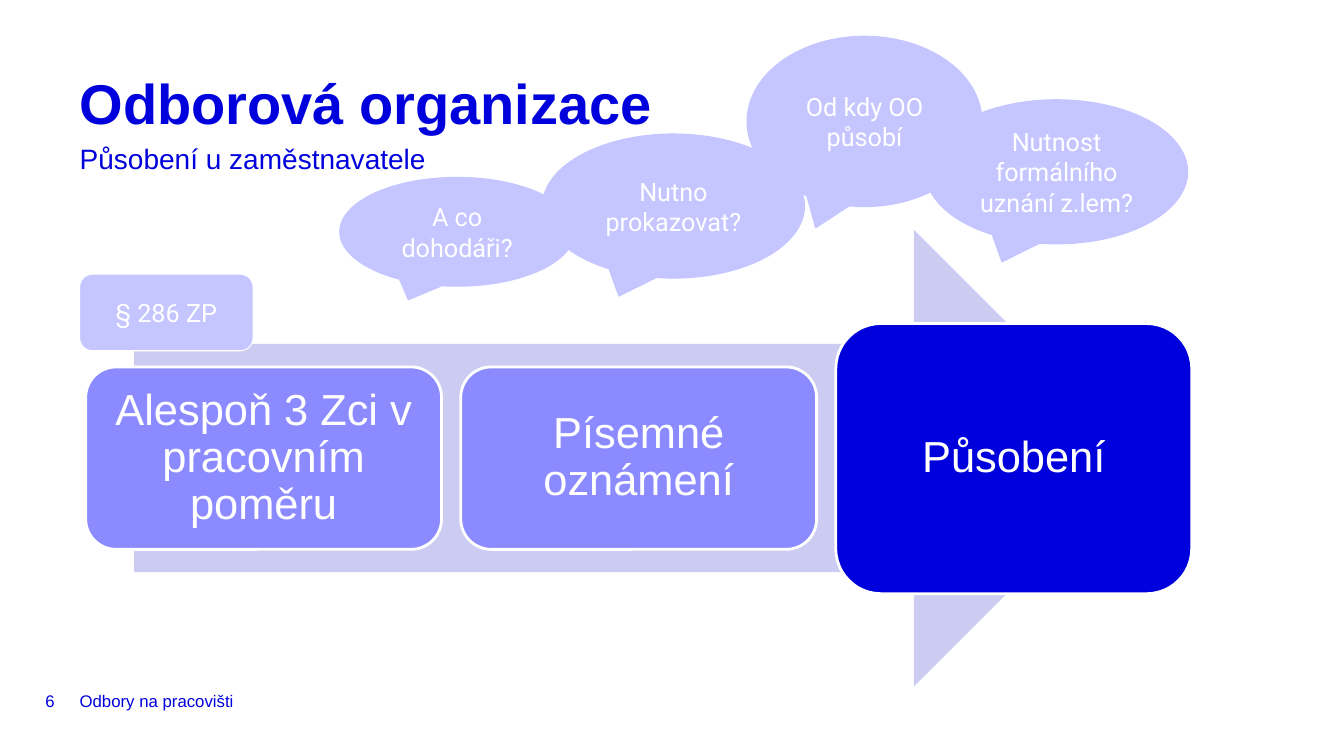
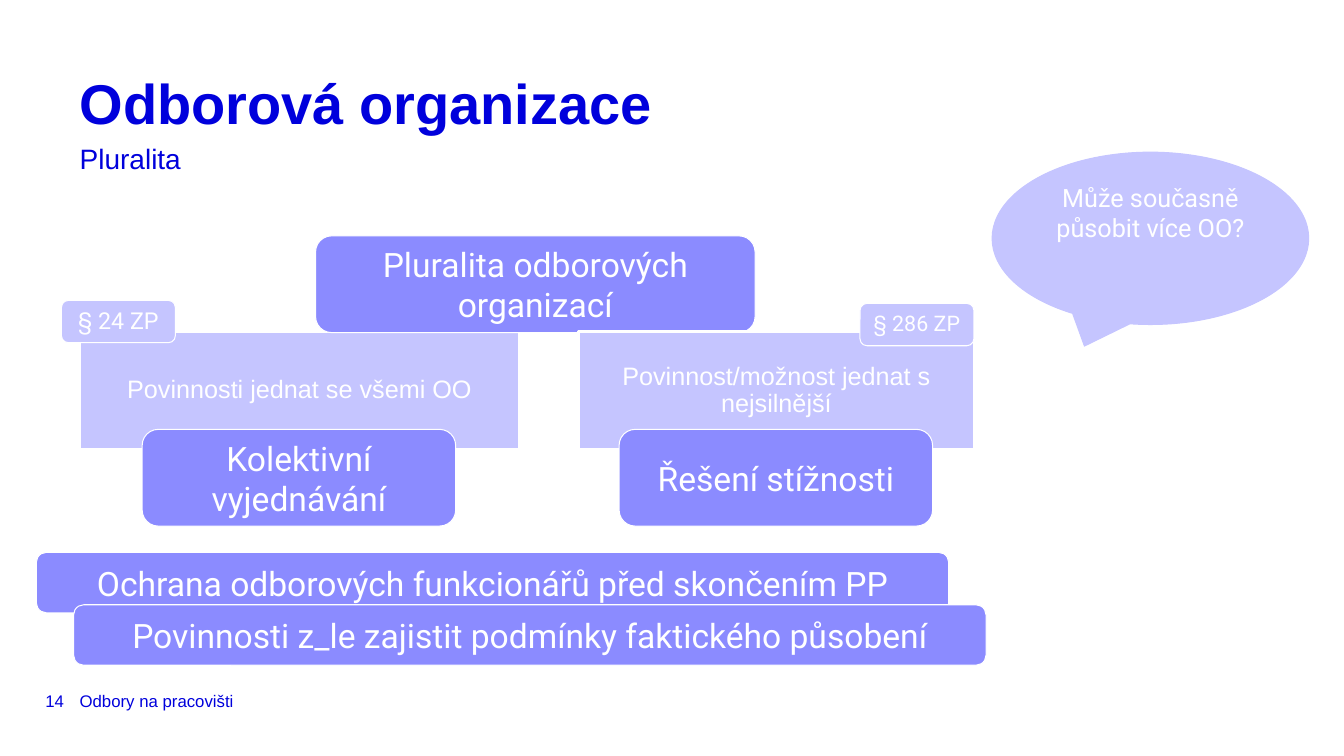
from pptx import Presentation
from pptx.dml.color import RGBColor
from pptx.enum.shapes import MSO_SHAPE
from pptx.enum.text import MSO_ANCHOR, PP_ALIGN
from pptx.util import Pt

PX = 9144  # 100 px to the inch

BLUE = RGBColor(0x00, 0x00, 0xDC)
VIOLET = RGBColor(0x8B, 0x8B, 0xFF)
LILAC = RGBColor(0xC5, 0xC5, 0xFF)
PALE = RGBColor(0xCC, 0xCC, 0xF2)
WHITE = RGBColor(0xFF, 0xFF, 0xFF)

ARROW = MSO_SHAPE.RIGHT_ARROW
RECT = MSO_SHAPE.RECTANGLE
ROUND = MSO_SHAPE.ROUNDED_RECTANGLE
CALLOUT = MSO_SHAPE.OVAL_CALLOUT
TOP, MIDDLE = MSO_ANCHOR.TOP, MSO_ANCHOR.MIDDLE
LEFT, CENTER = PP_ALIGN.LEFT, PP_ALIGN.CENTER


def write(sp, text, size=18, font="Roboto", color=WHITE, bold=False, align=CENTER,
          anchor=MIDDLE, inset=(10, 5), spacing=1.0, wrap=True):
    tf = sp.text_frame
    tf.word_wrap = wrap
    tf.vertical_anchor = anchor
    tf.margin_left = tf.margin_right = inset[0] * PX
    tf.margin_top = tf.margin_bottom = inset[1] * PX
    p = tf.paragraphs[0]
    p.alignment = align
    p.line_spacing = spacing
    r = p.add_run()
    r.text = text
    r.font.size = Pt(size)
    r.font.name = font
    r.font.bold = bold
    r.font.color.rgb = color


def block(s, preset, box, fill, line=WHITE, width=0.75):
    """Add a filled preset shape; box is left, top, width, height in px."""
    sp = s.shapes.add_shape(preset, *[v * PX for v in box])
    sp.shadow.inherit = False
    sp.fill.solid()
    sp.fill.fore_color.rgb = fill
    if line is None:
        sp.line.fill.background()
    else:
        sp.line.color.rgb = line
        sp.line.width = Pt(width)
    return sp


prs = Presentation()
prs.slide_width, prs.slide_height = 1333 * PX, 750 * PX

# Shared frame: footer, slide number, subtitle and title
slides = []
for number, subtitle in [("6", "Působení u zaměstnavatele"), ("14", "Pluralita")]:
    s = prs.slides.add_slide(prs.slide_layouts[6])
    slides.append(s)
    for text, box, style in [
        ("Odbory na pracovišti", (79, 681, 866, 28), dict(size=12)),
        (number, (45, 681, 28, 28), dict(size=12, wrap=False)),
        (subtitle, (79, 142, 1176, 30), dict(size=20, anchor=TOP, spacing=Pt(23))),
        ("Odborová organizace", (79, 79, 1176, 49),
         dict(size=40, bold=True, anchor=TOP, spacing=Pt(40))),
    ]:
        sp = s.shapes.add_textbox(*[v * PX for v in box])
        write(sp, text, font="Arial", color=BLUE, align=LEFT, inset=(0, 0), **style)

presence, plurality = slides

# Slide 6: steps along the arrow
block(presence, ARROW, (133, 228, 1000, 453), PALE, line=None)
STEP_LEFT, STEP_PITCH, STEP_WIDTH = 85, 372, 353
for i, (text, top, height, fill) in enumerate([
    ("Alespoň 3 Zci v pracovním poměru", 364, 181, VIOLET),
    ("Písemné oznámení", 364, 181, VIOLET),
    ("Působení", 321, 268, BLUE),
]):
    box = (STEP_LEFT + i * STEP_PITCH, top, STEP_WIDTH, height)
    sp = block(presence, ROUND, box, fill, width=2)
    write(sp, text, size=31, font="Arial", inset=(13, 13), spacing=0.9)

write(block(presence, ROUND, (79, 272, 172, 76), LILAC), "§ 286 ZP")

# Questions in callouts on both slides
for s, text, box, anchor in [
    (presence, "Od kdy OO působí", (741, 36, 233, 169), MIDDLE),
    (presence, "Nutnost formálního uznání z.lem?", (918, 99, 260, 143), MIDDLE),
    (presence, "Nutno prokazovat?", (538, 133, 260, 143), MIDDLE),
    (presence, "A co dohodáři?", (337, 176, 233, 108), MIDDLE),
    (plurality, "Může současně působit více OO?", (984, 151, 314, 171), TOP),
]:
    write(block(s, CALLOUT, box, LILAC, line=LILAC), text, anchor=anchor)

# Slide 14: duties, topics and law references, from back to front
duty = dict(font="Arial", inset=(7, 7), spacing=0.9)
topic = dict(size=24)
for preset, text, box, fill, width, style in [
    (RECT, "Povinnosti jednat se všemi OO", (79, 329, 436, 117), LILAC, 2, duty),
    (ROUND, "Pluralita odborových organizací", (313, 234, 436, 96), VIOLET, 0.75, topic),
    (RECT, "Povinnost/možnost jednat s nejsilnější", (574, 329, 392, 117), LILAC, 2, duty),
    (ROUND, "Kolektivní vyjednávání", (141, 426, 311, 96), VIOLET, 0.75, topic),
    (ROUND, "Řešení stížnosti", (614, 426, 311, 96), VIOLET, 0.75, topic),
    (ROUND, "Ochrana odborových funkcionářů před skončením PP",
     (36, 548, 905, 60), VIOLET, 0.75, topic),
    (ROUND, "Povinnosti z_le zajistit podmínky faktického působení",
     (73, 600, 905, 60), VIOLET, 0.75, topic),
    (ROUND, "§ 286 ZP", (853, 301, 113, 42), LILAC, 0.75, dict(size=15.3, spacing=0.9)),
    (ROUND, "§ 24 ZP", (61, 298, 113, 42), LILAC, 0.75, dict(size=16.6, spacing=0.9)),
]:
    write(block(plurality, preset, box, fill, width=width), text, **style)

prs.save("out.pptx")
